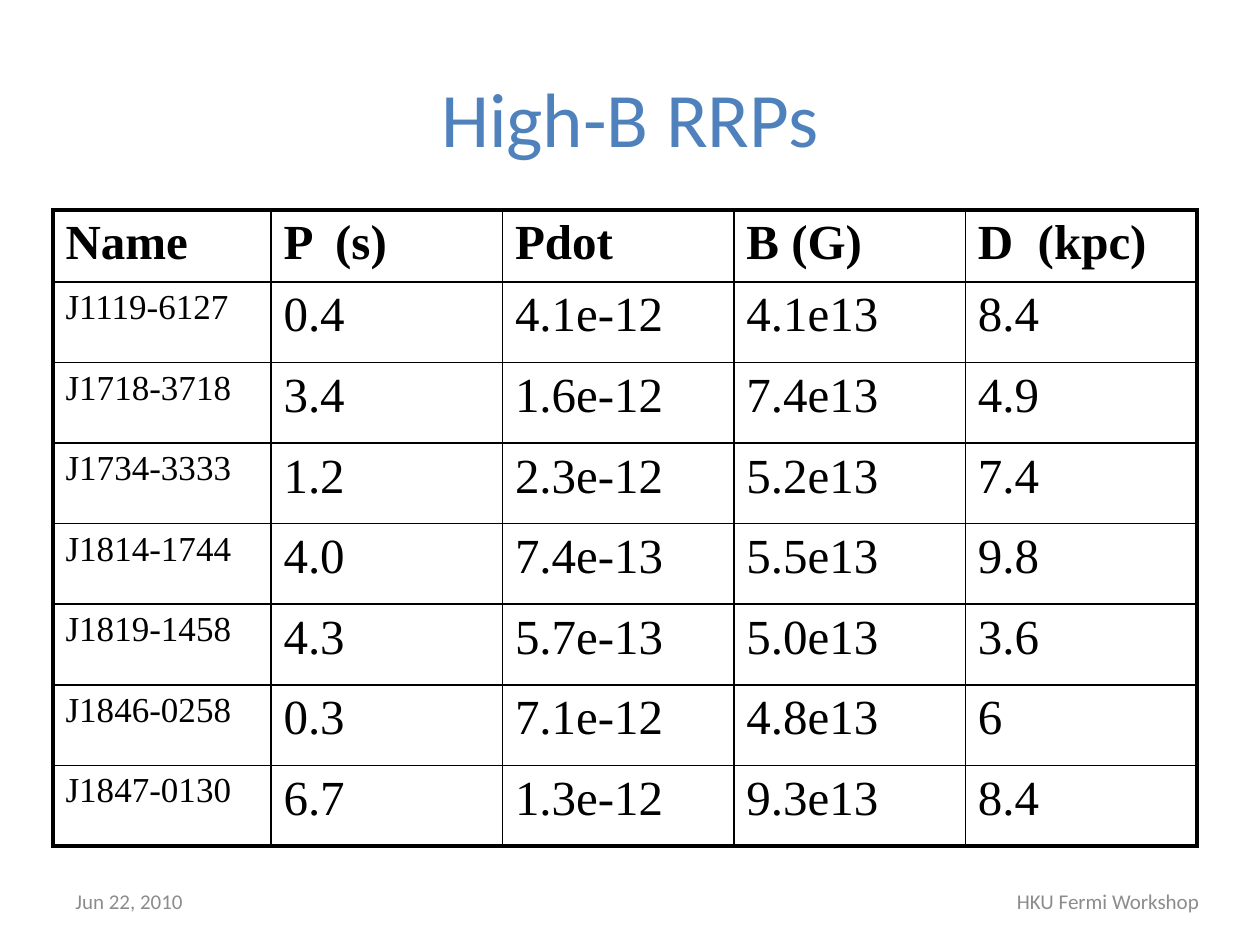
from lxml.etree import SubElement
from pptx import Presentation
from pptx.dml.color import RGBColor
from pptx.enum.text import MSO_ANCHOR, PP_ALIGN
from pptx.oxml.ns import qn
from pptx.util import Pt

PX = 914400 / 126
COLORS = {"title": "4F81BD", "ink": "000000", "footer": "8C8C8C"}
HEADER = ["Name", "P  (s)", "Pdot", "B (G)", "D  (kpc)"]
PULSARS = [
    ["J1119-6127", "0.4", "4.1e-12", "4.1e13", "8.4"],
    ["J1718-3718", "3.4", "1.6e-12", "7.4e13", "4.9"],
    ["J1734-3333", "1.2", "2.3e-12", "5.2e13", "7.4"],
    ["J1814-1744", "4.0", "7.4e-13", "5.5e13", "9.8"],
    ["J1819-1458", "4.3", "5.7e-13", "5.0e13", "3.6"],
    ["J1846-0258", "0.3", "7.1e-12", "4.8e13", "6"],
    ["J1847-0130", "6.7", "1.3e-12", "9.3e13", "8.4"],
]


def emu(*lengths):
    """Turn px lengths into EMU."""
    return [round(n * PX) for n in lengths]


def set_font(p, name, size, color, bold=False):
    """Set the font of a whole paragraph."""
    p.font.name, p.font.size, p.font.bold = name, Pt(size), bold
    p.font.color.rgb = RGBColor.from_string(COLORS[color])


def add_text(s, box, text, size, color, align):
    """Add a vertically centred line of text in a box."""
    tf = s.shapes.add_textbox(*emu(*box)).text_frame
    tf.word_wrap = True
    tf.vertical_anchor = MSO_ANCHOR.MIDDLE
    p = tf.paragraphs[0]
    p.text, p.alignment = text, align
    set_font(p, "Calibri", size, color)


def set_borders(cell, widths):
    """Draw the left, right, top and bottom borders of a cell."""
    tc_pr = cell._tc.get_or_add_tcPr()
    for i, (side, width) in enumerate(zip("LRTB", widths)):
        ln = SubElement(tc_pr, qn(f"a:ln{side}"), w=str(Pt(width)))
        fill = SubElement(ln, qn("a:solidFill"))
        SubElement(fill, qn("a:srgbClr"), val=COLORS["ink"])
        tc_pr.insert(i, ln)


def add_pulsar_table(s, box, name_w, header_h):
    """Add the pulsar table with a heavy frame and a thin inner grid."""
    rows = [HEADER] + PULSARS
    last_row, last_col = len(rows) - 1, len(HEADER) - 1
    table = s.shapes.add_table(len(rows), len(HEADER), *emu(*box)).table
    table.first_row = table.horz_banding = False
    value_w, row_h = emu((box[2] - name_w) / last_col, (box[3] - header_h) / last_row)
    for j, col in enumerate(table.columns):
        col.width = value_w if j else emu(name_w)[0]
    for i, row in enumerate(table.rows):
        row.height = row_h if i else emu(header_h)[0]
        for j, text in enumerate(rows[i]):
            cell = table.cell(i, j)
            cell.fill.background()
            outer = (j == 0, j == last_col, i == 0, i == last_row)
            set_borders(cell, [2.25 if edge else 1 for edge in outer])
            p = cell.text_frame.paragraphs[0]
            p.text = text
            set_font(p, "Times New Roman", 20 if i and not j else 28, "ink", i == 0)


def add_footer(s, box, date, event):
    """Add the date at the left and the event at the right of a strip."""
    x, y, w, h = box
    date_w, event_w = 294, 242
    add_text(s, (x, y, date_w, h), date, 12, "footer", PP_ALIGN.LEFT)
    add_text(s, (x + w - event_w, y, event_w, h), event, 12, "footer", PP_ALIGN.CENTER)


def main():
    """Build the slide and save it."""
    prs = Presentation()
    prs.slide_width, prs.slide_height = emu(1260, 945)
    s = prs.slides.add_slide(prs.slide_layouts[6])
    add_text(s, (63, 38, 1134, 157), "High-B RRPs", 44, "title", PP_ALIGN.CENTER)
    add_pulsar_table(s, (53, 210, 1144, 636), 218, 72)
    add_footer(s, (63, 876, 1166, 50), "Jun 22, 2010", "HKU Fermi Workshop")
    prs.save("out.pptx")


if __name__ == "__main__":
    main()
